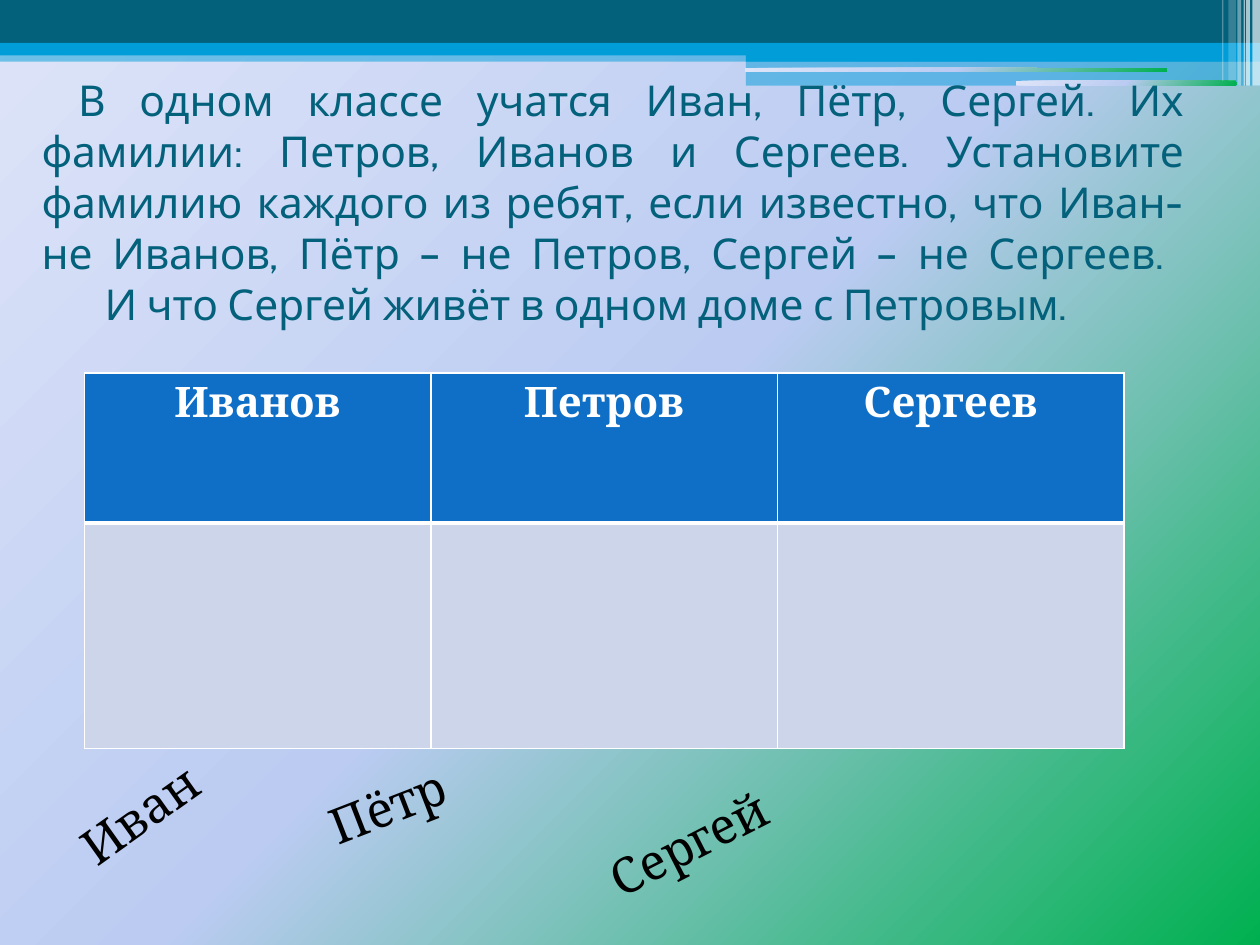
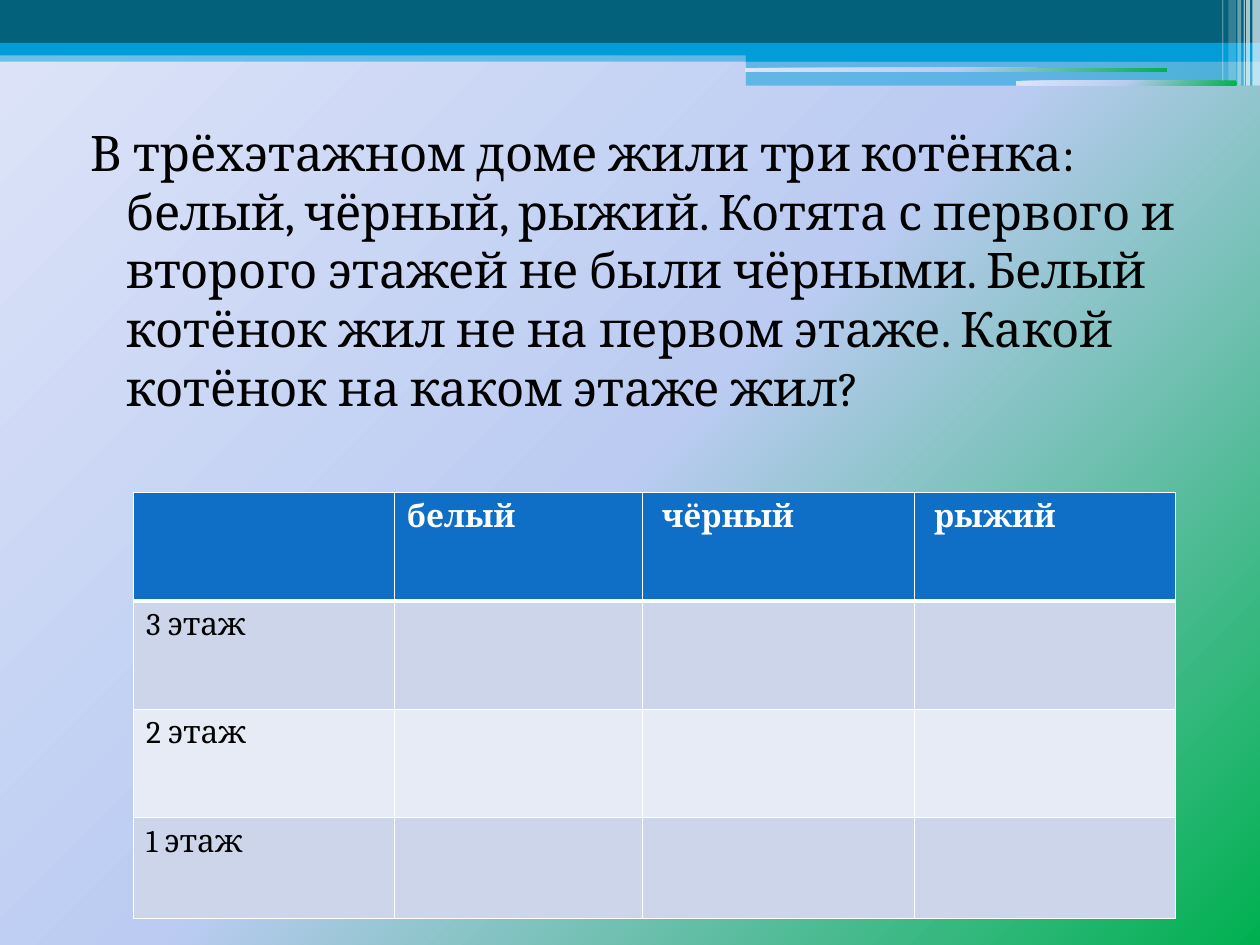
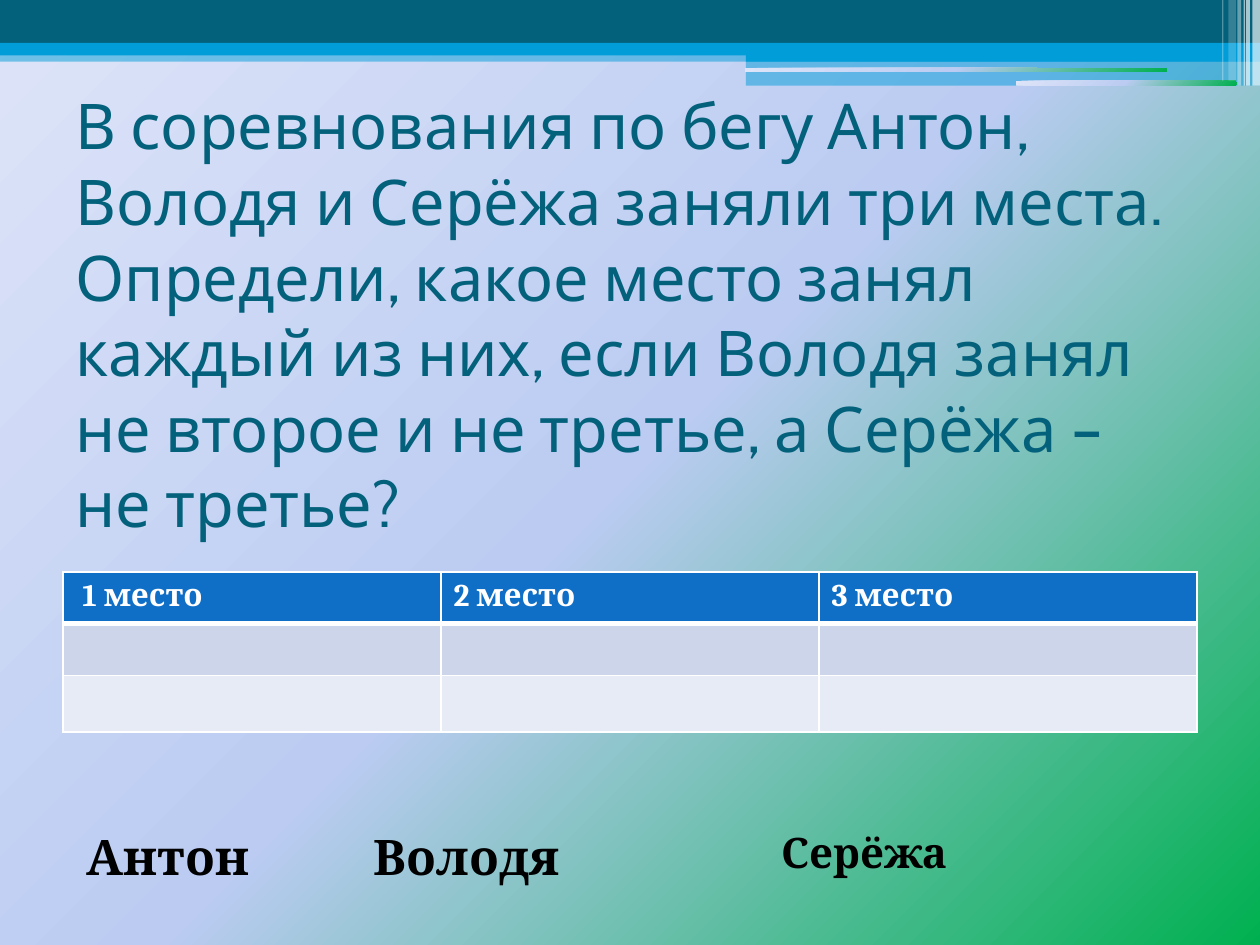
import copy
import dataclasses

import pptx
import pptx.dml.color
import pptx.enum.shapes
import pptx.enum.text
import pptx.oxml
import pptx.oxml.ns
import pptx.util

Inches = pptx.util.Inches
Pt = pptx.util.Pt
qn = pptx.oxml.ns.qn
Align = pptx.enum.text.PP_ALIGN
Kind = pptx.enum.shapes.MSO_SHAPE
NS = pptx.oxml.ns.nsdecls("a")


@dataclasses.dataclass(frozen=True)
class Theme:
    dark: str = "04617B"
    cyan: str = "009DD9"
    head: str = "0F6FC6"
    rows: tuple = ("CCD5EA", "E7EBF5")
    white: str = "FFFFFF"
    black: str = "000000"
    glow: tuple = ((0, "00B050"), (50, "BBCBF2"), (100, "DEE5F8"))
    sans: str = "Cabin"
    serif: str = "Cambria"
    large: float = 36
    name: float = 28
    mid: float = 24
    task: float = 24.3
    small: float = 18


THEME = Theme()

# Top bands: box, colour, opacity in percent
BANDS = [
    ((0, 0.4, 10, 0.09), THEME.cyan, 50),
    ((0, 0, 10, 0.34), THEME.dark, 100),
    ((0, 0.34, 10, 0.1), THEME.cyan, 100),
    ((5.92, 0.39, 4.08, 0.1), THEME.cyan, 100),
    ((5.92, 0.48, 4.08, 0.2), THEME.cyan, 50),
]
# Rounded slits that show the background
SLITS = [(5.91, 0.54, 3.35, 0.03), (8.06, 0.64, 1.75, 0.04)]
# White stripes at the right: left, width, height, opacity
STRIPES = [
    (9.94, 0.06, 0.68, 65),
    (9.89, 0.03, 0.68, 65),
    (9.87, 0.01, 0.68, 60),
    (9.82, 0.03, 0.68, 40),
    (9.75, 0.06, 0.64, 20),
    (9.7, 0.01, 0.64, 30),
]


def rgb(code):
    return pptx.dml.color.RGBColor.from_string(code)


def assign(item, form):
    for key, val in form.items():
        setattr(item, key, val)


def place(shape, box):
    keys = ("left", "top", "width", "height")
    assign(shape, dict(zip(keys, map(Inches, box))))


def paint(fill, color):
    fill.solid()
    fill.fore_color.rgb = rgb(color)


def blend(owner, fill):
    """Fill with the diagonal glow of the theme."""
    fill.gradient()
    stops = "".join(
        f'<a:gs pos="{pos * 1000}"><a:srgbClr val="{color}"/></a:gs>'
        for pos, color in THEME.glow)
    glow = pptx.oxml.parse_xml(
        f'<a:gradFill {NS} rotWithShape="1"><a:gsLst>{stops}</a:gsLst>'
        '<a:path path="circle"><a:fillToRect l="100000" t="100000"/></a:path>'
        '</a:gradFill>')
    old = next(owner.iter(qn("a:gradFill")))
    old.getparent().replace(old, glow)


def write(frame, text, size, face, color, bold=False, **form):
    """Put one formatted paragraph in a text frame."""
    para = frame.paragraphs[0]
    para.text = text
    assign(para, form)
    for run in para.runs:
        assign(run.font, {"size": Pt(size), "name": face, "bold": bold})
        run.font.color.rgb = rgb(color)
    return para


# Shared master

def band(slide, box, color=None, alpha=100):
    kind = Kind.RECTANGLE if color else Kind.ROUNDED_RECTANGLE
    shape = slide.shapes.add_shape(kind, *map(Inches, box))
    shape.shadow.inherit = False
    shape.line.fill.background()
    if color:
        paint(shape.fill, color)
        tint = next(shape.element.iter(qn("a:srgbClr")))
        if alpha < 100:
            tint.append(pptx.oxml.parse_xml(
                f'<a:alpha {NS} val="{alpha * 1000}"/>'))
    else:
        shape.adjustments[0] = 0.167
        blend(shape.element, shape.fill)
    return shape


def dress(master, slide):
    """Draw the bands on a slide, then move them to the master."""
    blend(master.element, master.background.fill)
    bands = [band(slide, *row) for row in BANDS]
    bands += [band(slide, box) for box in SLITS]
    bands += [band(slide, (left, 0, width, height), THEME.white, alpha)
              for left, width, height, alpha in STRIPES]
    for pos, shape in enumerate(bands):
        shape.element.xpath("p:nvSpPr/p:cNvPr")[0].set("id", str(20 + pos))
        master.shapes.element.insert(2 + pos, shape.element)


# Slide parts

def title(slide, box, text, size, **form):
    shape = slide.shapes.title
    place(shape, box)
    assign(shape.text_frame, {
        "word_wrap": True,
        "auto_size": pptx.enum.text.MSO_AUTO_SIZE.NONE,
        "vertical_anchor": pptx.enum.text.MSO_ANCHOR.MIDDLE})
    write(shape.text_frame, text, size, THEME.sans, THEME.dark, **form)
    # Line breaks take the size of the text
    for gap in shape.element.iter(qn("a:br")):
        gap.append(copy.deepcopy(next(shape.element.iter(qn("a:rPr")))))
    return shape


def indent(shape, left, first, extra):
    props = shape.text_frame.paragraphs[0].font and next(
        shape.element.iter(qn("a:pPr")))
    props.set("marL", str(Inches(left)))
    props.set("indent", str(Inches(first)))
    props.insert_element_before(pptx.oxml.parse_xml(extra), "a:defRPr")


def body(slide, box, text):
    shape = slide.placeholders[1]
    place(shape, box)
    frame = shape.text_frame
    frame.auto_size = pptx.enum.text.MSO_AUTO_SIZE.NONE
    write(frame, text, THEME.name, THEME.serif, THEME.black,
          space_before=Pt(0))
    indent(shape, 0.4, -0.28, f"<a:buNone {NS}/>")


def label(slide, box, text, size=THEME.name, bold=False, turn=0):
    shape = slide.shapes.add_textbox(*map(Inches, box))
    shape.rotation = turn
    shape.text_frame.word_wrap = True
    write(shape.text_frame, text, size, THEME.serif, THEME.black, bold)


def edge(cell, row):
    """White borders, thick between the head and the first row."""
    props = cell._tc.get_or_add_tcPr()
    wide = {"T": 3 if row == 1 else 1, "B": 3 if row == 0 else 1}
    for pos, side in enumerate("LRTB"):
        width = Pt(wide.get(side, 1))
        props.insert(pos, pptx.oxml.parse_xml(
            f'<a:ln{side} {NS} w="{width}"><a:solidFill>'
            f'<a:srgbClr val="{THEME.white}"/></a:solidFill></a:ln{side}>'))


def table(slide, spot, cols, rows, texts, size=THEME.small, align=Align.LEFT):
    grid = slide.shapes.add_table(
        len(rows), len(cols), *map(Inches, (*spot, sum(cols), sum(rows)))).table
    for col, width in zip(grid.columns, cols):
        col.width = Inches(width)
    for row, height in enumerate(rows):
        grid.rows[row].height = Inches(height)
        color = THEME.rows[(row - 1) % 2] if row else THEME.head
        for col in range(len(cols)):
            cell = grid.cell(row, col)
            paint(cell.fill, color)
            edge(cell, row)
            text = texts.get((row, col))
            if text:
                write(cell.text_frame, text, size, THEME.serif,
                      THEME.black if row else THEME.white, row == 0,
                      alignment=align)


# Slides

def pupils(slide):
    shape = title(
        slide, (0.23, 0, 9.27, 3.2),
        "В одном классе учатся Иван, Пётр, Сергей. Их фамилии: Петров, "
        "Иванов и Сергеев. Установите фамилию каждого из ребят, если "
        "известно, что Иван- не Иванов, Пётр – не Петров, Сергей – не "
        "Сергеев. \v\tИ что Сергей живёт в одном доме с Петровым.",
        THEME.task, alignment=Align.JUSTIFY)
    indent(shape, 0, 0.29, f'<a:tabLst {NS}><a:tab pos="{Inches(0.61)}" '
                           'algn="l"/></a:tabLst>')
    names = ("Иванов", "Петров", "Сергеев")
    table(slide, (0.67, 2.96), [2.75] * 3, [1.19, 1.79],
          {(0, col): name for col, name in enumerate(names)},
          THEME.mid, Align.CENTER)
    for box, name, turn in (
            ((0.42, 5.94, 2.03, 0.57), "Иван", 324.5),
            ((2.5, 6.09, 1.25, 0.57), "Пётр", 338.8),
            ((4.69, 6.38, 1.64, 0.57), "Сергей", 333)):
        label(slide, box, name, turn=turn)


def kittens(slide):
    blank = slide.shapes.title.element
    blank.getparent().remove(blank)
    body(slide, (0.5, 0.92, 9, 2.52),
         "В трёхэтажном доме жили три котёнка: белый, чёрный, рыжий. Котята "
         "с первого и второго этажей не были чёрными. Белый котёнок жил не "
         "на первом этаже. Какой котёнок на каком этаже жил?")
    texts = {(0, 1): "белый", (0, 2): " чёрный", (0, 3): " рыжий"}
    texts.update({(row, 0): f"{4 - row} этаж" for row in (1, 2, 3)})
    table(slide, (1.06, 3.91), [2.07, 1.97, 2.16, 2.07],
          [0.86, 0.86, 0.86, 0.8], texts)


def race(slide):
    title(slide, (0.5, 0.76, 9, 3.46),
          "В соревнования по бегу Антон, Володя и Серёжа заняли три места. "
          "Определи, какое место занял каждый из них, если Володя занял не "
          "второе и не третье, а Серёжа – не третье?",
          THEME.large, alignment=Align.LEFT)
    table(slide, (0.5, 4.54), [3] * 3, [0.41, 0.41, 0.45],
          {(0, 0): " 1 место", (0, 1): "2 место", (0, 2): "3 место"})
    for box, name, size in (
            ((0.59, 6.51, 1.81, 0.57), "Антон", THEME.name),
            ((2.87, 6.51, 3.07, 0.57), "Володя", THEME.name),
            ((6.1, 6.51, 2.99, 0.5), "Серёжа", THEME.mid)):
        label(slide, box, name, size, bold=True)


def main():
    deck = pptx.Presentation()
    assign(deck, {"slide_width": Inches(10), "slide_height": Inches(7.5)})
    plain, full = deck.slide_layouts[5], deck.slide_layouts[1]
    for pos, (build, layout) in enumerate(
            ((pupils, plain), (kittens, full), (race, plain))):
        slide = deck.slides.add_slide(layout)
        if pos == 0:
            dress(deck.slide_master, slide)
        build(slide)
    deck.save("out.pptx")


if __name__ == "__main__":
    main()
